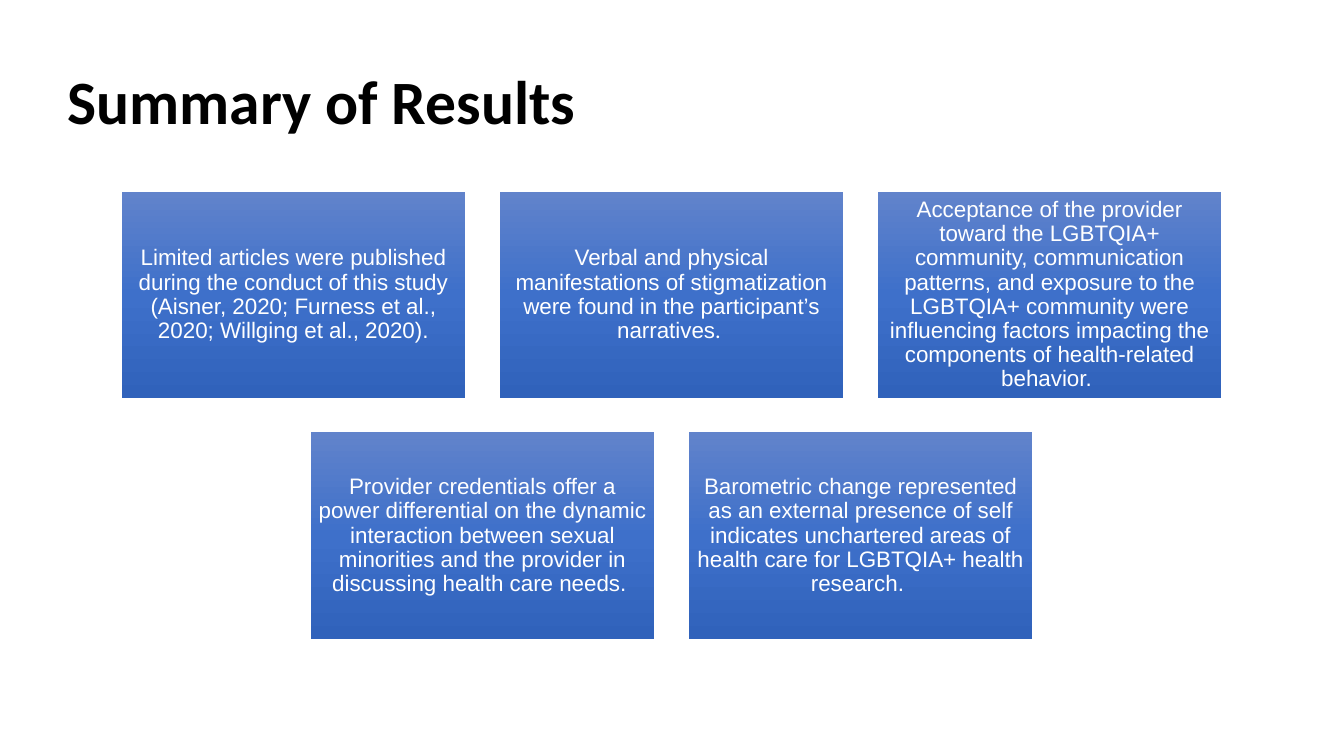
from copy import deepcopy
from dataclasses import dataclass

from pptx import Presentation
from pptx.dml.color import RGBColor
from pptx.enum.shapes import MSO_SHAPE
from pptx.enum.text import MSO_ANCHOR, PP_ALIGN
from pptx.oxml.ns import qn
from pptx.util import Inches, Pt

RECT = MSO_SHAPE.RECTANGLE
TOP, MIDDLE = MSO_ANCHOR.TOP, MSO_ANCHOR.MIDDLE
LEFT, CENTER = PP_ALIGN.LEFT, PP_ALIGN.CENTER


@dataclass(frozen=True)
class Theme:
    ink: str = "000000"
    light: str = "FFFFFF"
    shades: tuple = ((0, "6183CB"), (0.5, "3E70CA"), (1, "3062BB"))
    head: str = "Calibri"
    body: str = "Arial"
    head_size: int = 44
    body_size: int = 16


@dataclass(frozen=True)
class Grid:
    """Rows of equal cards, each row centred on the same axis."""
    axis: float = 6.66
    top: float = 1.9
    width: float = 3.41
    height: float = 2.05
    gap: float = 0.34

    def cell(self, row, col, count):
        step = self.width + self.gap
        left = self.axis - (count * step - self.gap) / 2 + col * step
        top = self.top + row * (self.height + self.gap)
        return left, top, self.width, self.height


THEME = Theme()
GRID = Grid()

# Each card is a list of (text, font) pieces.
ROWS = [
    [
        [("Limited articles were published during the conduct of this study "
          "(Aisner, 2020; Furness et al., 2020; Willging et al., 2020).",
          THEME.body)],
        [("Verbal and physical manifestations of stigmatization were found "
          "in the participant’s narratives", THEME.body),
         (". ", THEME.head)],
        [("Acceptance of the provider toward the LGBTQIA+ community, "
          "communication patterns, and exposure to the LGBTQIA+ community "
          "were influencing factors impacting the components of "
          "health-related behavior. ", THEME.body)],
    ],
    [
        [("Provider credentials offer a power differential on the dynamic "
          "interaction between sexual minorities and the provider in "
          "discussing health care needs. ", THEME.body)],
        [("Barometric change represented as an external presence of self "
          "indicates unchartered areas of health care for LGBTQIA+ health "
          "research. ", THEME.body)],
    ],
]


def write(shape, pieces, *, size, color, bold=False, align=LEFT,
          anchor=TOP, inset=None):
    frame = shape.text_frame
    frame.word_wrap = True
    frame.vertical_anchor = anchor
    if inset is not None:
        frame.margin_left = frame.margin_right = Inches(inset)
        frame.margin_top = frame.margin_bottom = Inches(inset)
    para = frame.paragraphs[0]
    para.alignment = align
    para.line_spacing = 0.9
    for text, face in pieces:
        run = para.add_run()
        run.text = text
        run.font.name = face
        run.font.size = Pt(size)
        run.font.bold = bold
        run.font.color.rgb = RGBColor.from_string(color)


def shade(shape):
    """Fill from top to bottom with the theme's three shades."""
    fill = shape.fill
    fill.gradient()
    fill.gradient_angle = 270
    stops = shape._element.spPr.find(qn("a:gradFill")).find(qn("a:gsLst"))
    stops.append(deepcopy(stops[-1]))
    for stop, (place, color) in zip(fill.gradient_stops, THEME.shades):
        stop.position = place
        stop.color.rgb = RGBColor.from_string(color)


def title(slide, text):
    box = slide.shapes.add_textbox(*map(Inches, (0.57, 0.66, 7.1, 1.13)))
    write(box, [(text, THEME.head)], size=THEME.head_size,
          color=THEME.ink, bold=True)


def card(slide, pieces, place):
    shape = slide.shapes.add_shape(RECT, *map(Inches, place))
    shape.shadow.inherit = False
    shape.line.fill.background()
    shade(shape)
    write(shape, pieces, size=THEME.body_size, color=THEME.light,
          align=CENTER, anchor=MIDDLE, inset=0.07)


def main():
    deck = Presentation()
    deck.slide_width, deck.slide_height = Inches(13.33), Inches(7.5)
    slide = deck.slides.add_slide(deck.slide_layouts[6])
    title(slide, "Summary of Results")
    for row, cards in enumerate(ROWS):
        for col, pieces in enumerate(cards):
            card(slide, pieces, GRID.cell(row, col, len(cards)))
    deck.save("out.pptx")


if __name__ == "__main__":
    main()
